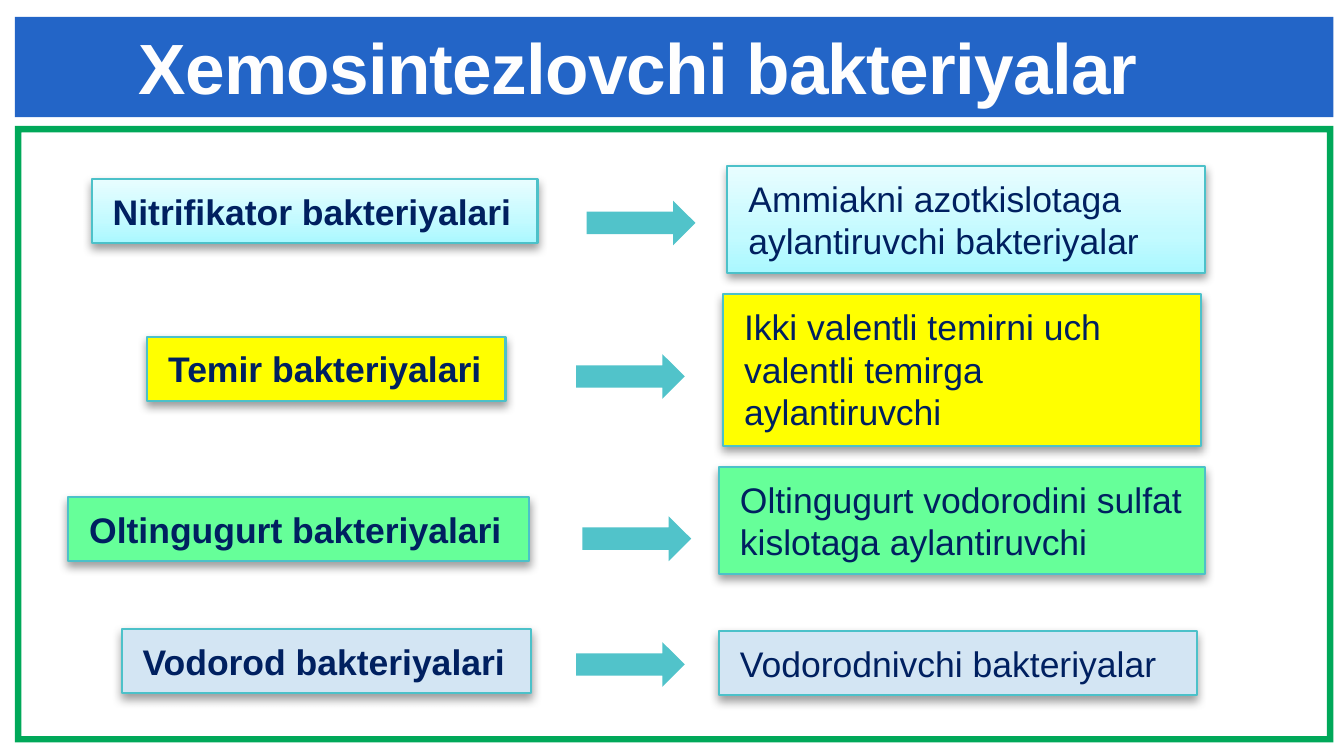
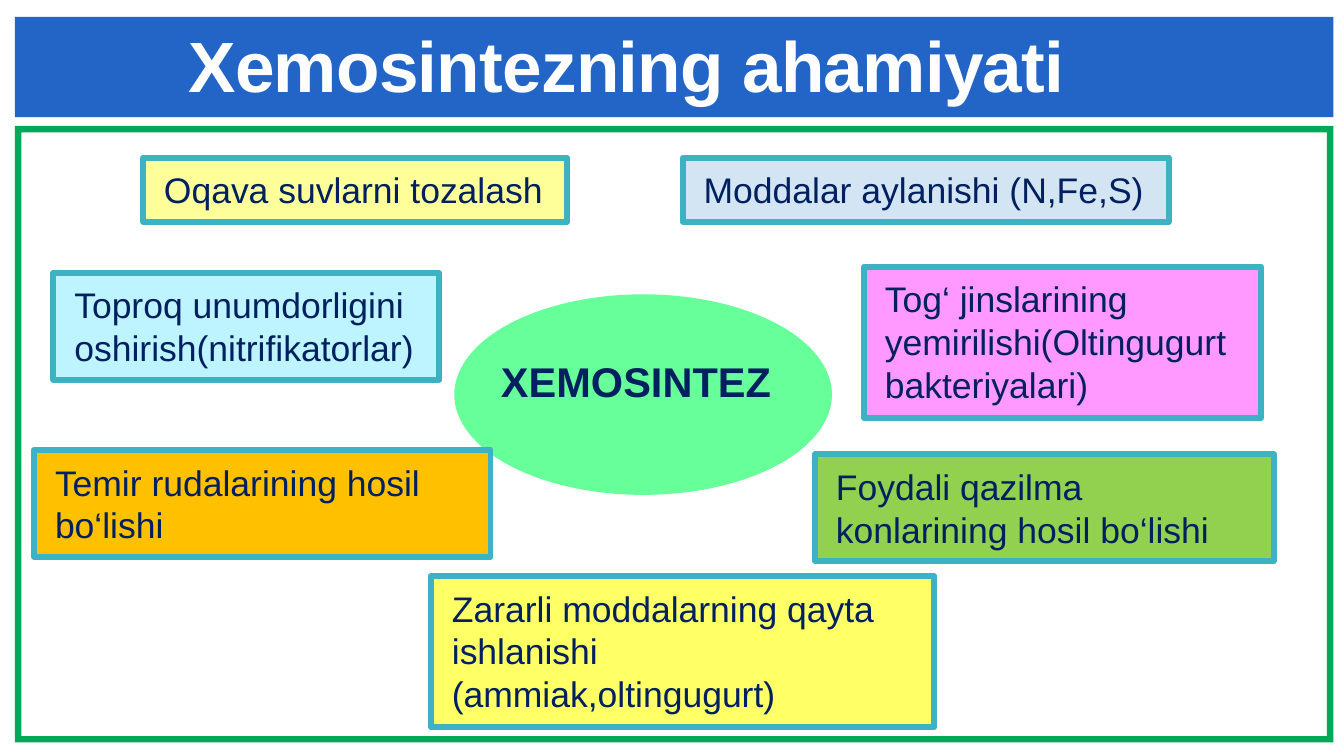
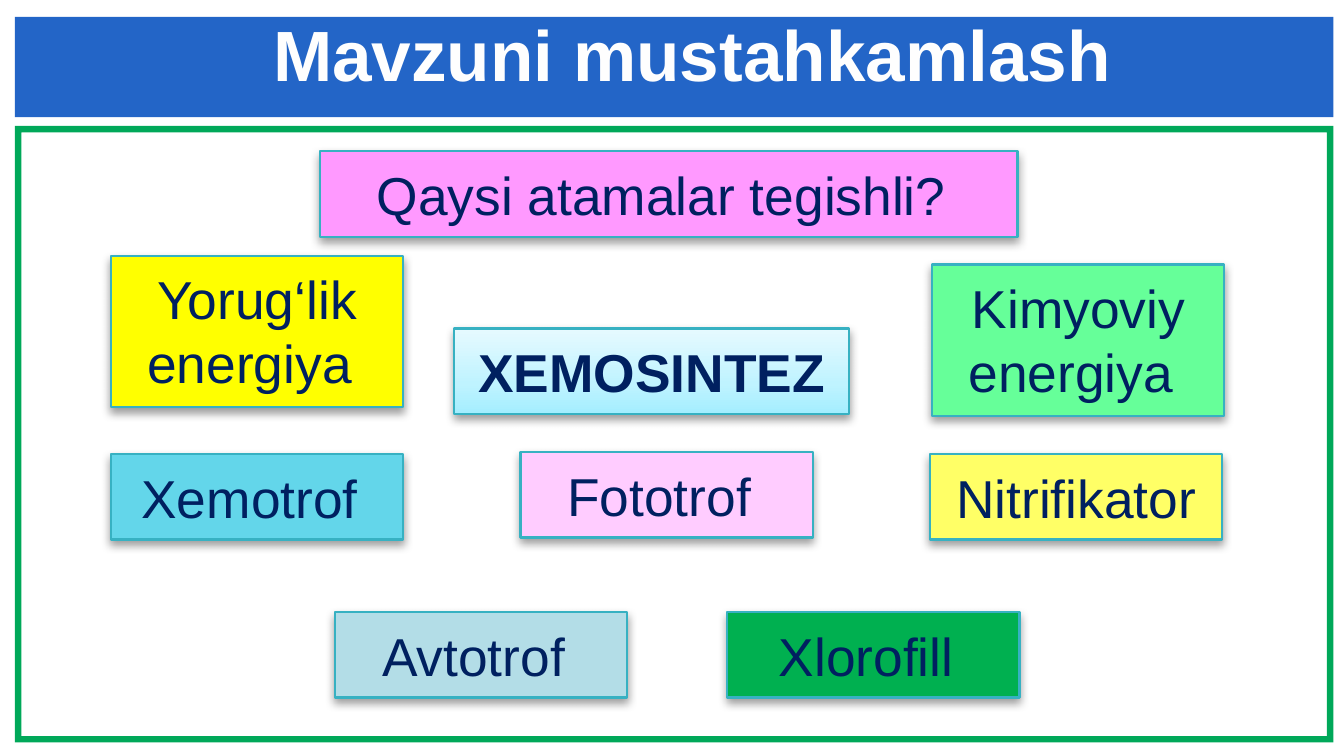
"""Build three slides on chemosynthetic bacteria and their importance."""
from dataclasses import dataclass

from pptx import Presentation
from pptx.dml.color import RGBColor
from pptx.enum.shapes import MSO_SHAPE
from pptx.enum.text import MSO_ANCHOR, MSO_AUTO_SIZE, PP_ALIGN
from pptx.oxml import parse_xml
from pptx.oxml.ns import nsdecls, qn
from pptx.util import Inches, Pt

RECTANGLE, ELLIPSE = MSO_SHAPE.RECTANGLE, MSO_SHAPE.OVAL
ARROW, FRAME = MSO_SHAPE.RIGHT_ARROW, MSO_SHAPE.FRAME
LEFT, CENTER = PP_ALIGN.LEFT, PP_ALIGN.CENTER
TOP, MIDDLE = MSO_ANCHOR.TOP, MSO_ANCHOR.MIDDLE
GROW, FIXED = MSO_AUTO_SIZE.SHAPE_TO_FIT_TEXT, MSO_AUTO_SIZE.NONE

SLIDE_WIDTH = 6.3
SLIDE_HEIGHT = SLIDE_WIDTH * 9 / 16


@dataclass(frozen=True)
class Theme:
    """Colours, font and type sizes of the whole presentation."""
    font: str = "Arial"
    band: str = "2365C7"
    frame: str = "00A859"
    title: str = "FEFEFE"
    ink: str = "002060"
    arrow: str = "51C3CA"
    yellow: str = "FFFF00"
    lemon: str = "FFFF66"
    cream: str = "FFFF99"
    mint: str = "66FF99"
    ice: str = "D3E5F3"
    pink: str = "FF99FF"
    title_size: int = 24
    term_size: int = 18
    topic_size: int = 14
    body_size: int = 12
    aqua_fade: tuple[str, ...] = ("AAF8FF", "C3FAFF", "E8FDFF")
    sky_fade: tuple[str, ...] = ("A4EEFF", "BFF3FF", "E6FAFF")


THEME = Theme()
FADE_STOPS = (0, 35, 100)


@dataclass(frozen=True)
class Box:
    """Place and size in inches."""
    left: float
    top: float
    width: float
    height: float

    def lengths(self) -> tuple:
        """Return the four values as lengths."""
        return tuple(map(Inches, (self.left, self.top, self.width, self.height)))


@dataclass(frozen=True)
class CardStyle:
    """Outline, shadow and text setting of a family of cards."""
    line: str
    line_width: float
    shadow: bool
    size: int
    align: PP_ALIGN = LEFT


@dataclass(frozen=True)
class Card:
    """A filled box with one paragraph."""
    text: str
    box: Box
    fill: str | tuple[str, ...]
    bold: bool = False
    wrap: bool = True


@dataclass(frozen=True)
class Process:
    """A group of bacteria, an arrow, and what the group does."""
    group: Card
    arrow_left: float
    arrow_top: float
    action: Card


@dataclass(frozen=True)
class Heading:
    """Wording and placing of a slide title."""
    text: str
    box: Box
    anchor: MSO_ANCHOR = MIDDLE
    insets: tuple[float, float] = (0, 0.02)
    spacing: int = -25


PROCESS_STYLE = CardStyle("4CC1C9", 0.75, True, THEME.body_size)
ROLE_STYLE = CardStyle("3CB2C3", 2, False, THEME.body_size)
TERM_STYLE = CardStyle("37B1C2", 0.75, True, THEME.term_size, CENTER)

BAND_BOX = Box(0.07, 0.08, 6.18, 0.47)
FRAME_BOX = Box(0.07, 0.59, 6.18, 2.89)
FRAME_WIDTH = 0.03


def process(group: str, group_box: Box, arrow: tuple[float, float],
            action: str, action_box: Box, fill: str | tuple[str, ...]) -> Process:
    """Make a process whose two cards share one fill."""
    return Process(Card(group, group_box, fill, bold=True, wrap=False), *arrow,
                   Card(action, action_box, fill))


PROCESSES = (
    process("Nitrifikator bakteriyalari", Box(0.43, 0.84, 2.09, 0.3), (2.75, 0.94),
            "Ammiakni azotkislotaga aylantiruvchi bakteriyalar",
            Box(3.41, 0.78, 2.24, 0.5), THEME.aqua_fade),
    process("Temir bakteriyalari", Box(0.69, 1.58, 1.68, 0.3), (2.7, 1.66),
            "Ikki valentli temirni uch valentli temirga aylantiruvchi",
            Box(3.39, 1.38, 2.24, 0.71), THEME.yellow),
    process("Oltingugurt bakteriyalari", Box(0.32, 2.33, 2.16, 0.3), (2.73, 2.42),
            "Oltingugurt vodorodini sulfat kislotaga aylantiruvchi",
            Box(3.37, 2.19, 2.28, 0.5), THEME.mint),
    process("Vodorod bakteriyalari", Box(0.57, 2.95, 1.92, 0.3), (2.7, 3.01),
            "Vodorodnivchi bakteriyalar", Box(3.37, 2.96, 2.24, 0.3), THEME.ice),
)

ROLES = (
    Card("Oqava suvlarni tozalash", Box(0.67, 0.74, 1.99, 0.3), THEME.cream, wrap=False),
    Card("Moddalar aylanishi (N,Fe,S)", Box(3.2, 0.74, 2.28, 0.3), THEME.ice, wrap=False),
    Card("Foydali qazilma konlarining hosil bo‘lishi", Box(3.82, 2.13, 2.15, 0.5), "92D050"),
    Card("Zararli moddalarning qayta ishlanishi (ammiak,oltingugurt)",
         Box(2.02, 2.7, 2.36, 0.71), THEME.lemon),
    Card("Toproq unumdorligini oshirish(nitrifikatorlar)", Box(0.25, 1.28, 1.81, 0.5), "BEF4FF"),
    Card("Tog‘ jinslarining yemirilishi(Oltingugurt bakteriyalari)",
         Box(4.05, 1.25, 1.86, 0.71), THEME.pink),
    Card("Temir rudalarining hosil bo‘lishi", Box(0.16, 2.11, 2.14, 0.5), "FFC000"),
)


def term(text: str, left: float, top: float, fill: str, height: float = 0.4) -> Card:
    """Make a term card of the common width."""
    return Card(text, Box(left, top, 1.37, height), fill)


TERMS = (
    Card("XEMOSINTEZ ", Box(2.13, 1.54, 1.85, 0.4), THEME.sky_fade, bold=True),
    Card("Qaysi atamalar tegishli? ", Box(1.5, 0.71, 3.27, 0.4), THEME.pink),
    term("Kimyoviy energiya ", 4.37, 1.24, THEME.mint, 0.71),
    term("Xlorofill ", 3.41, 2.87, "00B050"),
    term("Xemotrof ", 0.52, 2.13, "63D6EA"),
    term("Fototrof ", 2.44, 2.12, "FFCCFF"),
    term("Nitrifikator ", 4.36, 2.13, THEME.lemon),
    term("Yorug‘lik energiya ", 0.52, 1.2, THEME.yellow, 0.71),
    term("Avtotrof ", 1.57, 2.87, "B3DDE7"),
)


def write(frame, text: str, size: int, color: str, bold: bool, align: PP_ALIGN):
    """Write one paragraph and return it."""
    frame.text = text
    paragraph = frame.paragraphs[0]
    paragraph.alignment = align
    font = paragraph.font
    font.name, font.size, font.bold = THEME.font, Pt(size), bold
    font.color.rgb = RGBColor.from_string(color)
    return paragraph


def add_plain(slide, kind: MSO_SHAPE, box: Box, color: str):
    """Add a flat shape without outline or shadow."""
    shape = slide.shapes.add_shape(kind, *box.lengths())
    shape.shadow.inherit = False
    shape.fill.solid()
    shape.fill.fore_color.rgb = RGBColor.from_string(color)
    shape.line.fill.background()
    return shape


def apply_fade(shape, colors: tuple[str, ...]) -> None:
    """Fill a shape with a gradient that rises from its bottom edge."""
    stops = "".join(
        f'<a:gs pos="{stop * 1000}"><a:srgbClr val="{color}"/></a:gs>'
        for stop, color in zip(FADE_STOPS, colors))
    properties = shape.element.spPr
    properties.replace(properties.find(qn("a:solidFill")), parse_xml(
        f'<a:gradFill {nsdecls("a")} rotWithShape="1"><a:gsLst>{stops}</a:gsLst>'
        '<a:lin ang="16200000" scaled="0"/></a:gradFill>'))


def apply_shadow(shape) -> None:
    """Drop a soft shadow below a shape."""
    shape.element.spPr.find(qn("a:effectLst")).append(parse_xml(
        f'<a:outerShdw {nsdecls("a")} blurRad="{Pt(3.1)}" dist="{Pt(1.6)}" '
        'dir="5400000" rotWithShape="0"><a:srgbClr val="000000">'
        '<a:alpha val="38000"/></a:srgbClr></a:outerShdw>'))


def add_card(slide, card: Card, style: CardStyle) -> None:
    """Add a card in the given style."""
    faded = isinstance(card.fill, tuple)
    shape = add_plain(slide, RECTANGLE, card.box, card.fill[0] if faded else card.fill)
    if faded:
        apply_fade(shape, card.fill)
    shape.line.color.rgb = RGBColor.from_string(style.line)
    shape.line.width = Pt(style.line_width)
    if style.shadow:
        apply_shadow(shape)
    frame = shape.text_frame
    frame.word_wrap, frame.auto_size, frame.vertical_anchor = card.wrap, GROW, TOP
    write(frame, card.text, style.size, THEME.ink, card.bold, style.align)


def add_titled_slide(deck, layout, heading: Heading):
    """Add a slide and set its title."""
    slide = deck.slides.add_slide(layout)
    title = slide.shapes.title
    title.left, title.top, title.width, title.height = heading.box.lengths()
    frame = title.text_frame
    frame.word_wrap, frame.auto_size, frame.vertical_anchor = True, FIXED, heading.anchor
    side, top = map(Inches, heading.insets)
    frame.margin_left = frame.margin_right = side
    frame.margin_top, frame.margin_bottom = top, 0
    paragraph = write(frame, heading.text, THEME.title_size, THEME.title, True, CENTER)
    paragraph.space_before = Pt(1.3 if heading.anchor == MIDDLE else 0)
    paragraph.font._element.set("spc", str(heading.spacing))
    return slide


def move_frame_to_layout(slide, layout) -> None:
    """Give the layout the title band and green frame shared by all slides."""
    for placeholder in list(layout.placeholders):
        if placeholder.placeholder_format.idx:
            layout.shapes.element.remove(placeholder.element)
    band = add_plain(slide, RECTANGLE, BAND_BOX, THEME.band)
    border = add_plain(slide, FRAME, FRAME_BOX, THEME.frame)
    border.adjustments[0] = FRAME_WIDTH / FRAME_BOX.height
    for part in (band, border):
        layout.shapes.element.insert(2, part.element)


def draw_processes(slide) -> None:
    """Draw each group of bacteria with its action."""
    for step in PROCESSES:
        add_card(slide, step.group, PROCESS_STYLE)
        add_card(slide, step.action, PROCESS_STYLE)
        add_plain(slide, ARROW, Box(step.arrow_left, step.arrow_top, 0.51, 0.21), THEME.arrow)


def draw_roles(slide) -> None:
    """Draw the topic and the roles around it."""
    add_plain(slide, ELLIPSE, Box(2.13, 1.38, 1.77, 0.94), THEME.mint)
    topic = slide.shapes.add_textbox(*Box(2.25, 1.62, 1.48, 0.34).lengths()).text_frame
    topic.word_wrap, topic.auto_size = False, GROW
    write(topic, "XEMOSINTEZ", THEME.topic_size, THEME.ink, True, LEFT)
    for role in ROLES:
        add_card(slide, role, ROLE_STYLE)


def draw_terms(slide) -> None:
    """Draw the question and the terms to choose from."""
    for card in TERMS:
        add_card(slide, card, TERM_STYLE)


def main() -> None:
    """Build and save the presentation."""
    deck = Presentation()
    deck.slide_width, deck.slide_height = Inches(SLIDE_WIDTH), Inches(SLIDE_HEIGHT)
    layout = deck.slide_layouts[5]

    bacteria = add_titled_slide(deck, layout, Heading(
        "Xemosintezlovchi bakteriyalar", Box(0.34, 0.09, 5.3, 0.42)))
    move_frame_to_layout(bacteria, layout)
    draw_processes(bacteria)

    importance = add_titled_slide(deck, layout, Heading(
        "Xemosintezning ahamiyati ", Box(0.6, 0.08, 4.76, 0.42)))
    draw_roles(importance)

    review = add_titled_slide(deck, layout, Heading(
        "Mavzuni mustahkamlash ", Box(0.26, 0, 6.06, 0.5), TOP, (0.1, 0.05), 0))
    draw_terms(review)

    deck.save("out.pptx")


if __name__ == "__main__":
    main()
